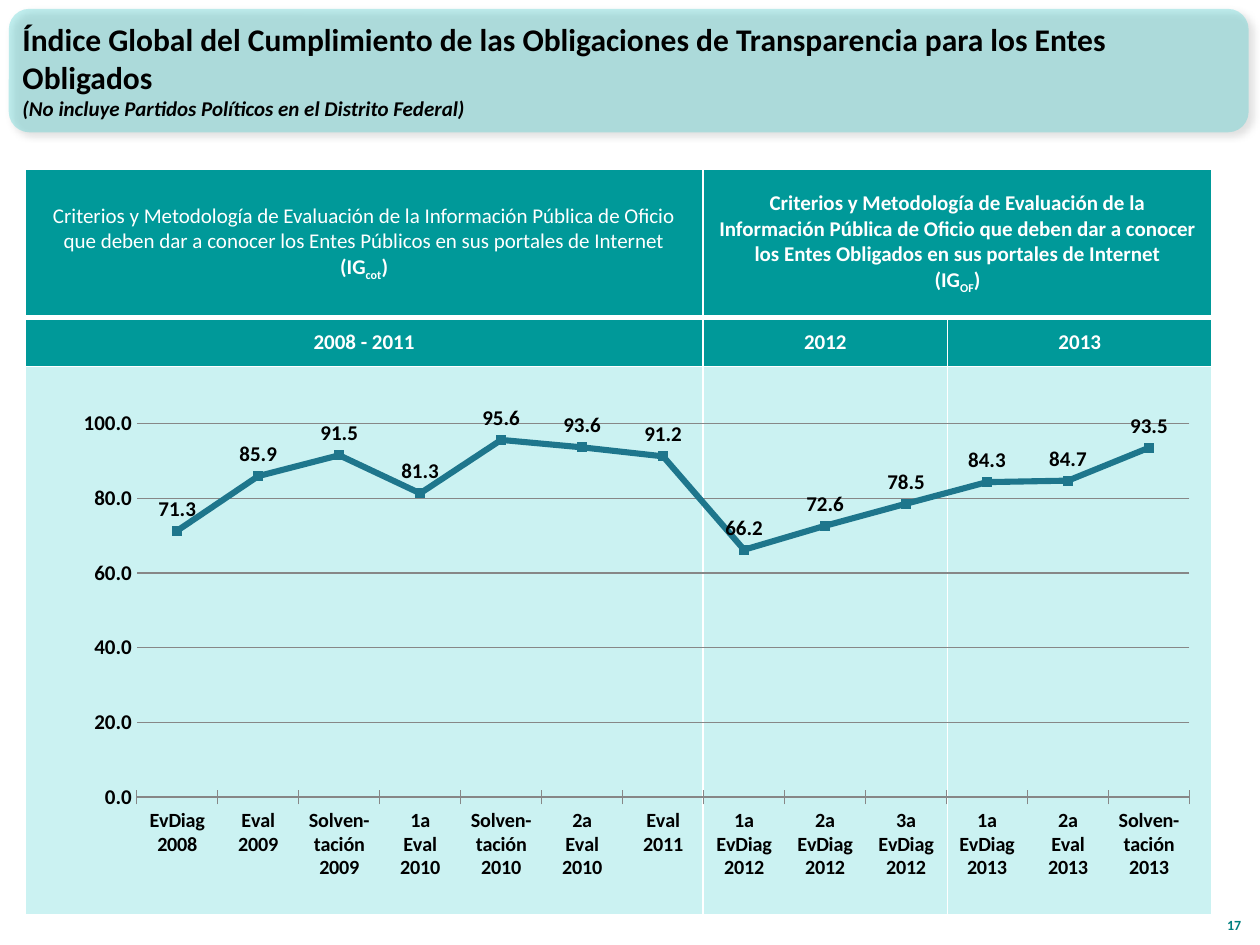
"""Build the slide on the global index of transparency obligations."""
from dataclasses import dataclass
from typing import Optional

from lxml import etree
from pptx import Presentation
from pptx import util as u
from pptx.chart.data import CategoryChartData
from pptx.dml.color import RGBColor
from pptx.enum import chart as ch, shapes, text
from pptx.oxml import parse_xml
from pptx.oxml.ns import nsdecls, qn


@dataclass(frozen=True)
class Theme:
    font: str = "Calibri"
    black: str = "000000"
    white: str = "FFFFFF"
    head: str = "009999"
    tint: str = "33CCCC"
    page: str = "008080"
    line: str = "1E768C"
    grid: str = "878787"
    title: float = 18
    body: float = 12
    label: float = 11.5
    small: float = 8


@dataclass(frozen=True)
class Box:
    col: float
    row: float
    wide: float
    high: float

    def place(self) -> tuple:
        return tuple(cell(n) for n in (self.col, self.row, self.wide, self.high))


@dataclass(frozen=True)
class Run:
    words: str
    size: float
    color: str
    bold: bool = True
    slant: bool = False
    base: int = 0


@dataclass(frozen=True)
class Head:
    row: int
    col: int
    paras: list
    span: int = 1


T = Theme()
COLS, ROWS = 1000, 750
UNIT = u.Inches(10) / COLS
MID = text.MSO_ANCHOR.MIDDLE
CENTER = text.PP_ALIGN.CENTER


def cell(count: float) -> int:
    return round(count * UNIT)


def rgb(code: str) -> RGBColor:
    return RGBColor.from_string(code)


def tint(fill, code: str, share: Optional[int] = None) -> None:
    fill.solid()
    fill.fore_color.rgb = rgb(code)
    if share is not None:
        for node in fill._xPr.iter(qn("a:srgbClr")):
            if node.getparent().getparent() is fill._xPr:
                etree.SubElement(node, qn("a:alpha"), val=str(share * 1000))


def write(frame, paras: list, align=None) -> None:
    for num, runs in enumerate(paras):
        para = frame.paragraphs[0] if num == 0 else frame.add_paragraph()
        para.alignment = align
        for item in runs:
            run = para.add_run()
            run.text = item.words
            font = run.font
            font.name, font.size = T.font, u.Pt(item.size)
            font.bold, font.italic = item.bold, item.slant
            font.color.rgb = rgb(item.color)
            if item.base:
                font._element.set("baseline", str(item.base * 1000))


def add_text(slide, box: Box, paras: list, anchor, align=None) -> None:
    frame = slide.shapes.add_textbox(*box.place()).text_frame
    frame.word_wrap, frame.vertical_anchor = True, anchor
    write(frame, paras, align)


def add_band(slide, box: Box) -> None:
    band = slide.shapes.add_shape(shapes.MSO_SHAPE.ROUNDED_RECTANGLE, *box.place())
    band.line.fill.background()
    tint(band.fill, T.tint, 30)
    band._element.spPr.append(parse_xml(
        f'<a:effectLst {nsdecls("a")}><a:outerShdw blurRad="{u.Pt(4)}" dist="{u.Pt(3)}" '
        f'dir="2700000" algn="tl" rotWithShape="0"><a:srgbClr val="{T.black}">'
        '<a:alpha val="40000"/></a:srgbClr></a:outerShdw></a:effectLst>'))


def edge(spot, base: float) -> None:
    props = spot._tc.get_or_add_tcPr()
    for tag, wide in (("lnL", 1), ("lnR", 1), ("lnT", 1), ("lnB", base)):
        line = etree.SubElement(props, qn(f"a:{tag}"), w=str(u.Pt(wide)))
        fill = etree.SubElement(line, qn("a:solidFill"))
        etree.SubElement(fill, qn("a:srgbClr"), val=T.white)


def add_grid(slide, box: Box, wides: list, highs: list, heads: list) -> None:
    table = slide.shapes.add_table(len(highs), len(wides), *box.place()).table
    for col, wide in zip(table.columns, wides):
        col.width = cell(wide)
    for num, high in enumerate(highs):
        table.rows[num].height = cell(high)
        for spot in table.rows[num].cells:
            edge(spot, 3 if num == 0 else 1)
            if num < 2:
                tint(spot.fill, T.head)
            else:
                tint(spot.fill, T.tint, 25)
    for head in heads:
        spot = table.cell(head.row, head.col)
        if head.span > 1:
            spot.merge(table.cell(head.row, head.col + head.span - 1))
        spot.vertical_anchor = MID
        write(spot.text_frame, head.paras, CENTER)


def set_font(font, size: float) -> None:
    font.name, font.size, font.bold = T.font, u.Pt(size), True
    font.color.rgb = rgb(T.black)


def add_plot(slide, box: Box, points: list) -> None:
    data = CategoryChartData(number_format="0.0")
    data.categories = [name for name, _ in points]
    data.add_series("Series 1", [val for _, val in points])
    chart = slide.shapes.add_chart(ch.XL_CHART_TYPE.LINE_MARKERS, *box.place(), data).chart
    chart.has_legend = chart.has_title = False
    set_font(chart.font, T.body)
    cats, vals = chart.category_axis, chart.value_axis
    cats.major_tick_mark = ch.XL_TICK_MARK.CROSS
    cats.format.line.color.rgb = rgb(T.grid)
    set_font(cats.tick_labels.font, T.label)
    vals.minimum_scale, vals.maximum_scale, vals.major_unit = 0, 100, 20
    vals.major_tick_mark = ch.XL_TICK_MARK.NONE
    vals.format.line.fill.background()
    vals.major_gridlines.format.line.color.rgb = rgb(T.grid)
    vals.tick_labels.number_format = "#,##0.0"
    vals.tick_labels.number_format_is_linked = False
    plot = chart.plots[0]
    plot.vary_by_categories = False
    line = plot.series[0]
    line.smooth = False
    line.format.line.color.rgb, line.format.line.width = rgb(T.line), u.Pt(3.5)
    mark = line.marker
    mark.style, mark.size = ch.XL_MARKER_STYLE.SQUARE, 5
    tint(mark.format.fill, T.line)
    mark.format.line.color.rgb = rgb(T.line)
    tags = line.data_labels
    tags.show_value, tags.position = True, ch.XL_LABEL_POSITION.ABOVE
    tags.number_format, tags.number_format_is_linked = "0.0", False
    set_font(tags.font, T.body)
    area = chart._chartSpace.chart.plotArea
    for old in area.findall(qn("c:layout")):
        area.remove(old)
    frame = etree.Element(qn("c:layout"))
    spot = etree.SubElement(frame, qn("c:manualLayout"))
    for tag, val in (("layoutTarget", "inner"), ("xMode", "edge"), ("yMode", "edge"),
                     ("x", 0.094), ("y", 0.077), ("w", 0.887), ("h", 0.711)):
        etree.SubElement(spot, qn(f"c:{tag}"), val=str(val))
    area.insert(0, frame)


def rule(who: str, sub: str, bold: bool) -> list:
    words = ("Criterios y Metodología de Evaluación de la Información Pública de Oficio "
             f"que deben dar a conocer los Entes {who} en sus portales de Internet")
    return [[Run(words, T.body, T.white, bold)],
            [Run("(IG", T.body, T.white), Run(sub, T.body, T.white, base=-25),
             Run(")", T.body, T.white)]]


def main() -> None:
    deck = Presentation()
    deck.slide_width, deck.slide_height = cell(COLS), cell(ROWS)
    slide = deck.slides.add_slide(deck.slide_layouts[6])
    add_band(slide, Box(7, 7, 984, 98))
    add_text(slide, Box(8, 9, 925, 94), [
        [Run("Índice Global del Cumplimiento de las Obligaciones de Transparencia "
             "para los Entes Obligados", T.title, T.black)],
        [Run("(No incluye Partidos Políticos en el Distrito Federal)",
             T.body, T.black, slant=True)]], MID)
    add_text(slide, Box(955, 706, 40, 40), [[Run("17", T.small, T.page)]],
             text.MSO_ANCHOR.BOTTOM, text.PP_ALIGN.RIGHT)
    years = [Head(1, col, [[Run(year, T.body, T.white)]])
             for col, year in enumerate(("2008 - 2011", "2012", "2013"))]
    add_grid(slide, Box(20, 134, 942, 592), [538, 194, 210], [118, 39, 435],
             [Head(0, 0, rule("Públicos", "cot", False)),
              Head(0, 1, rule("Obligados", "OF", True), 2), *years])
    add_plot(slide, Box(20, 304, 942, 417), [
        ("EvDiag\n2008", 71.3), ("Eval\n2009", 85.9), ("Solven-\ntación\n2009", 91.5),
        ("1a\nEval\n2010", 81.3), ("Solven-\ntación\n2010", 95.6), ("2a\nEval\n2010", 93.6),
        ("Eval\n2011", 91.2), ("1a\nEvDiag\n2012", 66.2), ("2a\nEvDiag\n2012", 72.6),
        ("3a\nEvDiag\n2012", 78.5), ("1a\nEvDiag\n2013", 84.3), ("2a\nEval\n2013", 84.7),
        ("Solven-\ntación\n2013", 93.5)])
    deck.save("out.pptx")


if __name__ == "__main__":
    main()
